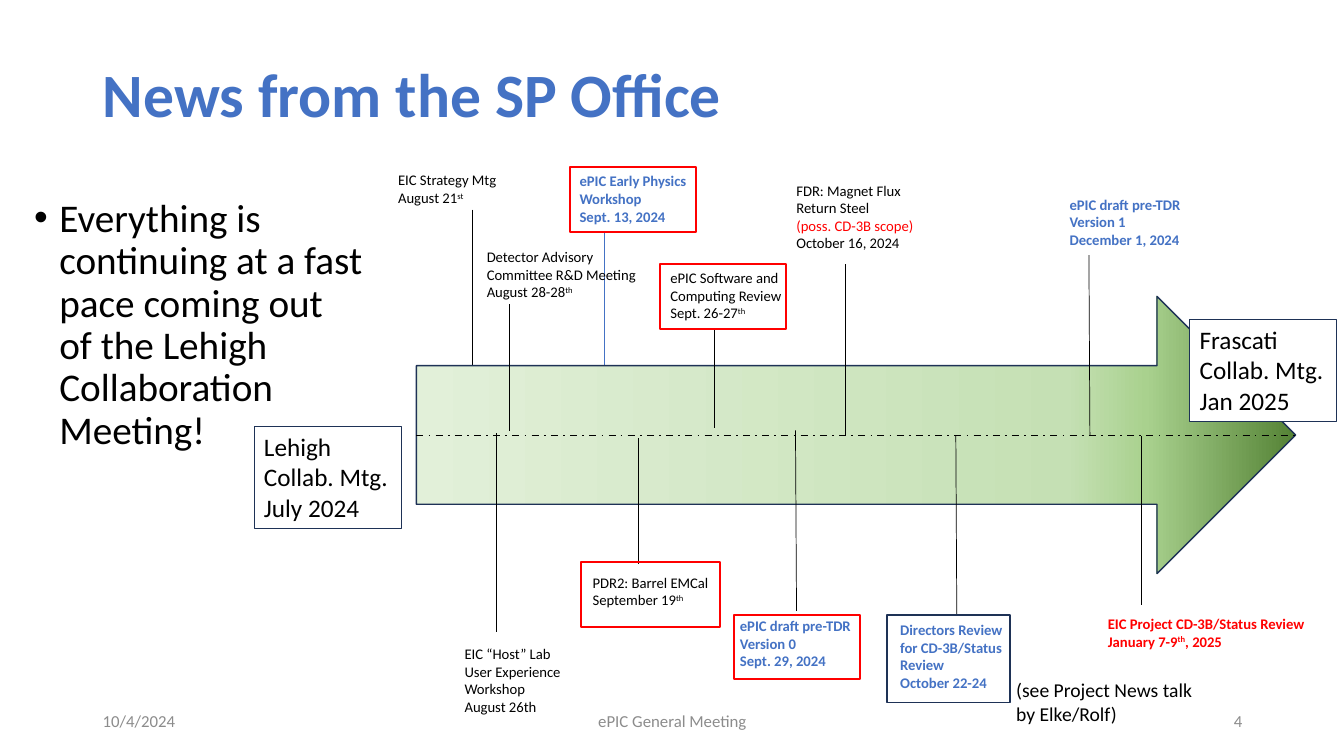
from copy import deepcopy

from lxml.etree import SubElement
from pptx import Presentation
from pptx.dml.color import RGBColor
from pptx.enum.dml import MSO_LINE
from pptx.enum.shapes import MSO_CONNECTOR, MSO_SHAPE
from pptx.enum.text import MSO_ANCHOR, PP_ALIGN
from pptx.oxml.ns import qn
from pptx.util import Inches, Pt

COLORS = {
    "black": "000000", "white": "FFFFFF", "blue": "4472C4", "red": "FF0000",
    "navy": "1E3256", "gray": "8C8C8C",
}
# Position and colour of each stop along the timeline arrow
STOPS = [(0, "E2F0D9"), (0.74, "C5E0B4"), (0.83, "A9D18E"), (1, "548235")]
AXIS = 4.32


def rgb(name):
    return RGBColor.from_string(COLORS.get(name, name))


def write(frame, text, size=10.5, color="black", bold=False, align=PP_ALIGN.LEFT,
          anchor=MSO_ANCHOR.TOP, spacing=None, bullet=False):
    """Fill a text frame; newlines split paragraphs, ^ marks enclose superscripts."""
    frame.word_wrap = True
    frame.vertical_anchor = anchor
    for i, line in enumerate(text.split("\n")):
        para = frame.paragraphs[0] if i == 0 else frame.add_paragraph()
        para.alignment = align
        if spacing:
            para.line_spacing = spacing
        if bullet:
            props = para._p.get_or_add_pPr()
            props.set("marL", str(Inches(0.25)))
            props.set("indent", str(Inches(-0.25)))
            SubElement(props, qn("a:buFont")).set("typeface", "Arial")
            SubElement(props, qn("a:buChar")).set("char", "•")
        for j, part in enumerate(line.split("^")):
            if not part:
                continue
            run = para.add_run()
            run.text = part
            font = run.font
            font.name, font.size, font.bold = "Calibri", Pt(size), bold
            font.color.rgb = rgb(color)
            if j % 2:
                font._element.set("baseline", "30000")
    return frame


class Board:
    """Holds the current slide and draws its elements."""

    def __init__(self, slide):
        self.slide = slide
        self.shapes = slide.shapes

    def title(self, text, box):
        item = self.shapes.title
        item.left, item.top, item.width, item.height = map(Inches, box)
        write(item.text_frame, text, size=44, color="blue", bold=True,
              anchor=MSO_ANCHOR.MIDDLE, spacing=0.9)

    def text(self, text, box, **style):
        item = self.shapes.add_textbox(*map(Inches, box))
        return write(item.text_frame, text, **style)

    def shape(self, box, kind=MSO_SHAPE.RECTANGLE, fill=None, line=None, width=1):
        item = self.shapes.add_shape(kind, *map(Inches, box))
        item.shadow.inherit = False
        if fill:
            item.fill.solid()
            item.fill.fore_color.rgb = rgb(fill)
        else:
            item.fill.background()
        if line:
            item.line.color.rgb = rgb(line)
            item.line.width = Pt(width)
        else:
            item.line.fill.background()
        return item

    def label(self, text, box, line=None, width=1, **style):
        item = self.shape(box, fill="white", line=line, width=width)
        return write(item.text_frame, text, **style)

    def line(self, x1, y1, x2, y2, color="black", width=0.5, dash=None):
        item = self.shapes.add_connector(
            MSO_CONNECTOR.STRAIGHT, *map(Inches, (x1, y1, x2, y2)))
        item.line.color.rgb = rgb(color)
        item.line.width = Pt(width)
        if dash:
            item.line.dash_style = dash
        SubElement(item._element.spPr, qn("a:effectLst"))

    def arrow(self, box):
        item = self.shape(box, MSO_SHAPE.RIGHT_ARROW, line="navy")
        item.fill.gradient()
        item.fill.gradient_angle = 0
        first = item._element.spPr.find(".//" + qn("a:gs"))
        for _ in STOPS[2:]:
            first.addnext(deepcopy(first))
        for stop, (place, color) in zip(item.fill.gradient_stops, STOPS):
            stop.position = place
            stop.color.rgb = rgb(color)


def main():
    deck = Presentation()
    deck.slide_width, deck.slide_height = Inches(13.33), Inches(7.5)
    board = Board(deck.slides.add_slide(deck.slide_layouts[5]))
    key = {"color": "blue", "bold": True}

    # Title, message and footer
    board.title("News from the SP Office", (0.92, 0.4, 11.5, 1.13))
    board.text("Everything is continuing at a fast pace coming out of the Lehigh "
               "Collaboration Meeting!", (0.24, 1.92, 3.47, 4.76),
               size=28, spacing=0.9, bullet=True)
    for text, left, width, align in [
        ("10/4/2024", 0.92, 3, PP_ALIGN.LEFT),
        ("ePIC General Meeting", 4.42, 4.5, PP_ALIGN.CENTER),
        ("4", 9.42, 3, PP_ALIGN.RIGHT),
    ]:
        board.text(text, (left, 6.95, width, 0.4), size=12, color="gray",
                   align=align, anchor=MSO_ANCHOR.MIDDLE)

    # Events whose lines run behind the arrow
    board.line(5.99, 2.29, 5.99, 4.27, color="blue")
    board.text("ePIC Early Physics Workshop\nSept. 13, 2024",
               (5.65, 1.66, 1.35, 0.63), **key)
    board.line(4.69, 2.08, 4.69, AXIS)
    board.text("EIC Strategy Mtg\nAugust 21^st^", (3.85, 1.65, 1.33, 0.45))

    # Timeline arrow with its axis
    board.arrow((4.13, 2.94, 8.72, 2.75))
    board.line(4.13, AXIS, 12.85, AXIS, width=1.25, dash=MSO_LINE.DASH_DOT)

    # Collaboration meetings at both ends
    for text, left, top in [
        ("Frascati Collab. Mtg. Jan 2025", 11.8, 3.17),
        ("Lehigh Collab. Mtg. July 2024", 2.52, 4.23),
    ]:
        board.label(text, (left, top, 1.46, 1.01), line="navy", width=0.75, size=18)

    # Events on white labels: text, box, line, format
    for text, box, ends, style in [
        ("PDR2: Barrel EMCal\nSeptember 19^th^",
         (5.78, 5.64, 1.7, 0.45), (6.33, 4.35, 6.33, 5.6), {}),
        ("ePIC Software and\nComputing Review\nSept. 26-27^th^",
         (6.55, 2.62, 1.38, 0.63), (7.09, 3.27, 7.09, 4.25), {}),
        ("ePIC draft pre-TDR Version 0\nSept. 29, 2024",
         (7.24, 6.07, 1.38, 0.63), (7.89, 4.27, 7.9, 6.06), key),
        ("ePIC draft pre-TDR Version 1\nDecember 1, 2024",
         (10.51, 1.89, 1.38, 0.63), (10.8, 2.53, 10.81, AXIS), key),
        ("Directors Review for CD-3B/Status Review\nOctober 22-24",
         (8.83, 6.11, 1.38, 0.81), (9.48, AXIS, 9.49, 6.11), key),
    ]:
        board.label(text, box, **style)
        board.line(*ends)

    # Magnet event with its scope in red
    board.line(8.38, 2.62, 8.38, AXIS)
    magnet = board.label(
        "FDR: Magnet Flux Return Steel\n(poss. CD-3B scope)\nOctober 16, 2024",
        (7.8, 1.75, 1.39, 0.81))
    magnet.paragraphs[1].runs[0].font.color.rgb = rgb("red")

    # Events in plain text
    for text, box, ends, style in [
        ("Detector Advisory\nCommittee R&D Meeting\nAugust 28-28^th^",
         (4.73, 2.41, 2.23, 0.63), (5.05, 3.02, 5.05, 4.28), {}),
        ("EIC Project CD-3B/Status Review\nJanuary 7-9^th^, 2025",
         (10.89, 6.05, 2.23, 0.45), (11.32, 4.33, 11.32, 6),
         {"color": "red", "bold": True}),
        ("EIC “Host” Lab User Experience Workshop\nAugust 26th",
         (4.51, 6.35, 1.33, 0.81), (4.92, 4.3, 4.92, 6.27), {}),
    ]:
        board.text(text, box, **style)
        board.line(*ends)

    # Frames around key events
    board.shape((8.8, 6.1, 1.22, 0.87), line="navy", width=1.25)
    for left, top, width in [(6.55, 2.62, 1.25), (7.28, 6.1, 1.25),
                             (5.65, 1.66, 1.25), (5.76, 5.58, 1.38)]:
        board.shape((left, top, width, 0.64), line="red", width=1.5)
    board.text("(see Project News talk by Elke/Rolf)", (9.98, 6.68, 2.03, 0.57), size=14)

    deck.save("out.pptx")


if __name__ == "__main__":
    main()
